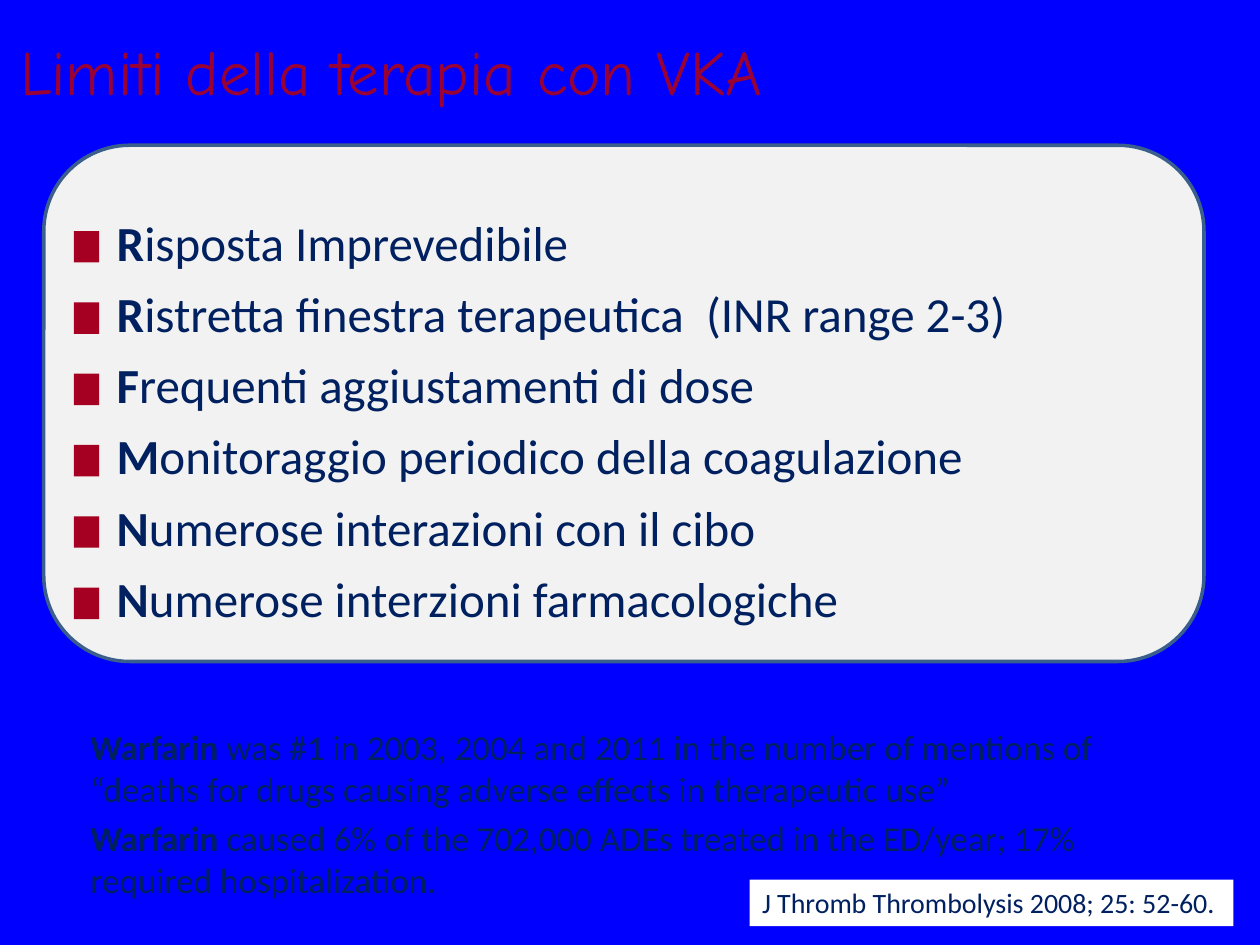
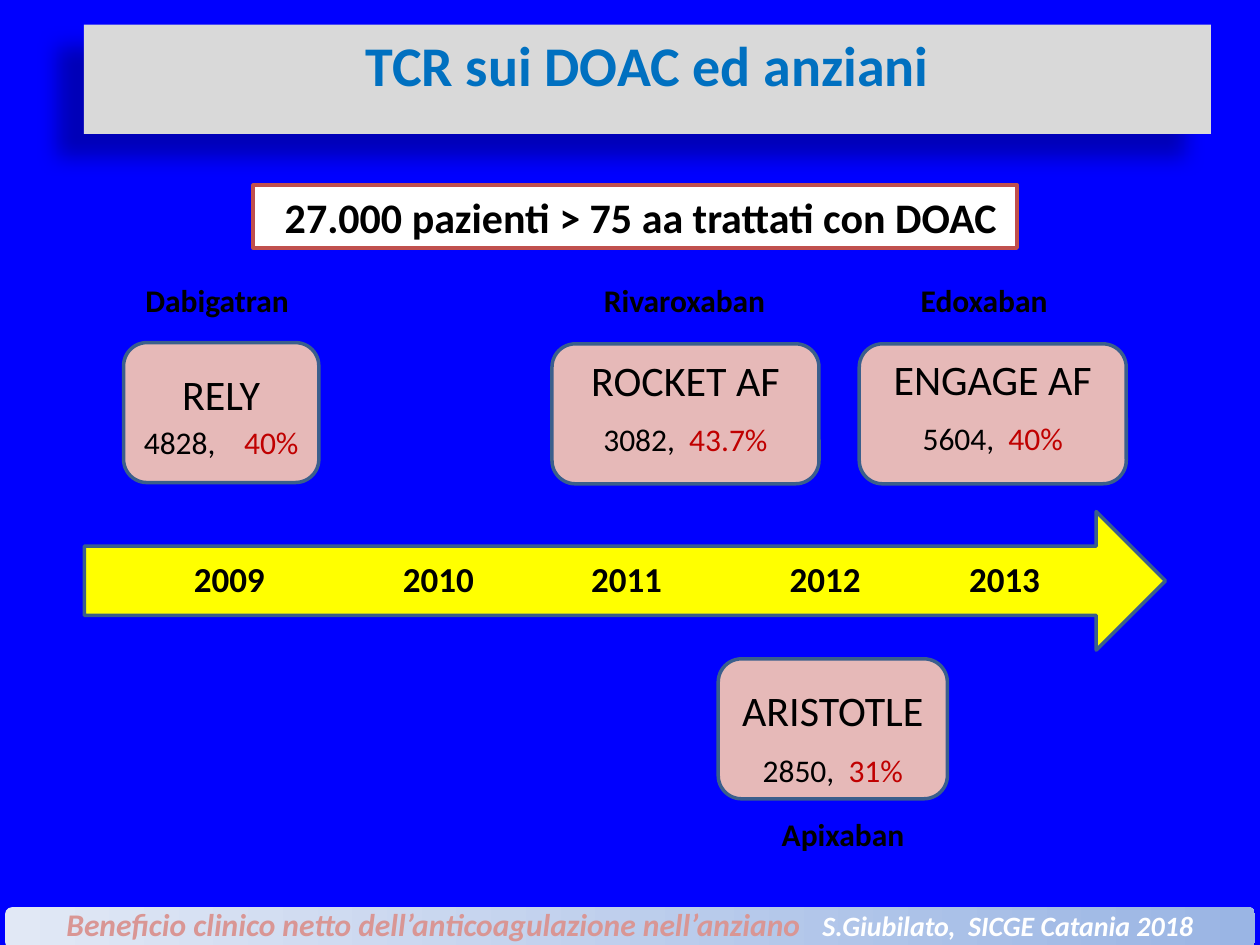
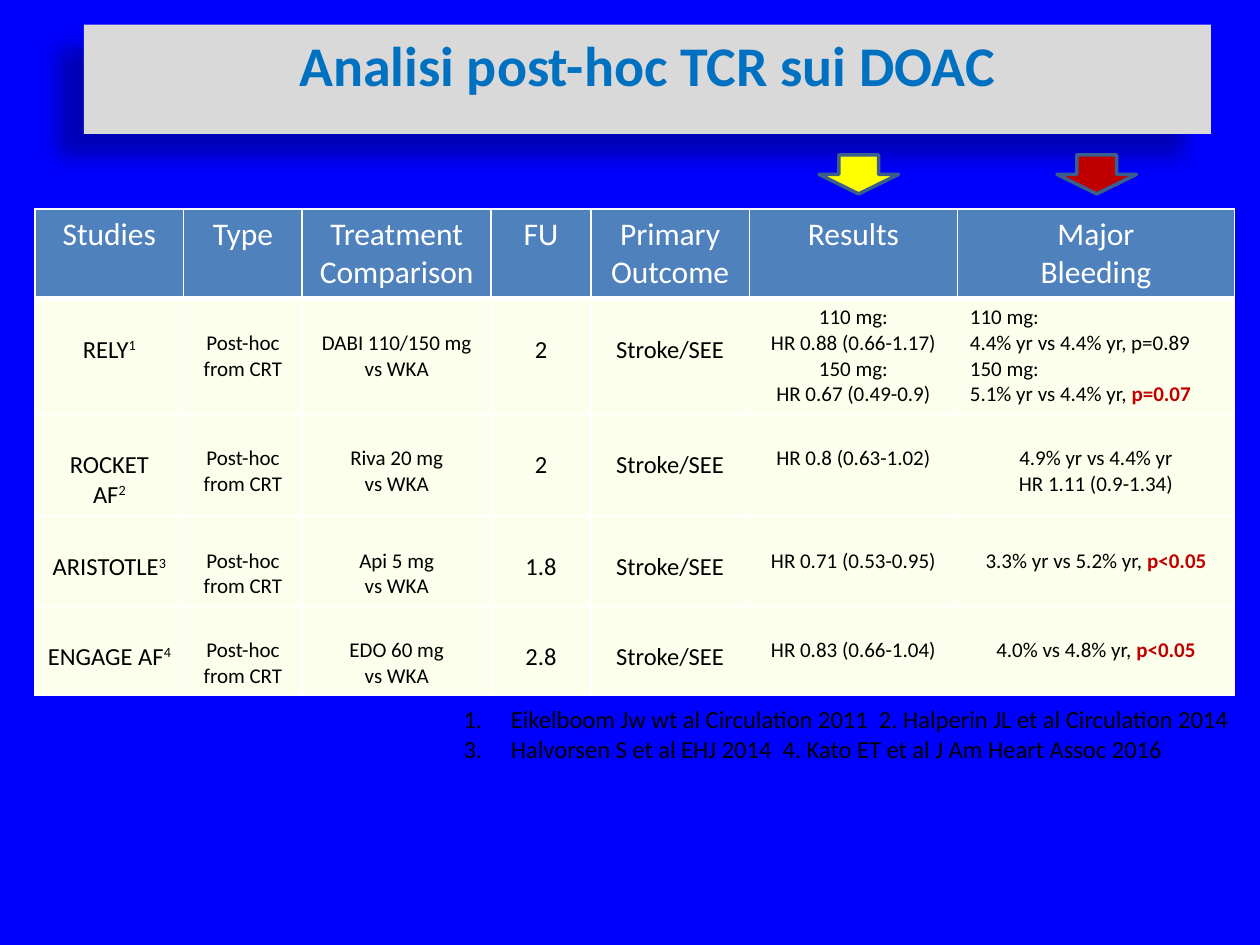
import pptx
import pptx.dml.color
import pptx.enum.shapes
import pptx.enum.text
import pptx.oxml
import pptx.oxml.ns
import pptx.util

Pt = pptx.util.Pt
SHAPE = pptx.enum.shapes.MSO_SHAPE
ALIGN = pptx.enum.text.PP_ALIGN
ANCHOR = pptx.enum.text.MSO_ANCHOR

COLORS = {
    "background": "0000FF", "panel": "F2F2F2", "outline": "3A5F8C",
    "marker": "A50021", "navy": "002060", "crimson": "990033",
    "white": "FFFFFF", "black": "000000", "yellow": "FFFF00",
    "red": "C00000", "card": "E6B9B8", "callout": "C0504D",
    "banner": "D9D9D9", "heading": "0070C0", "strip_light": "E1E8F5",
    "strip_dark": "9AB5E4", "footer": "D99694", "header": "4F81BD",
    "cell": "FCFFEB",
}
BANNER_BOX = (48, 14, 644, 62.5)
RED = {"color": "red"}
RED_BOLD = {"color": "red", "bold": True}
BOLD = {"bold": True}


# Shared helpers

def rgb(name):
    return pptx.dml.color.RGBColor.from_string(COLORS[name])


def write(paragraph, parts, size, color="black", bold=False, italic=False,
          face="Calibri", align=None):
    """Fill a paragraph with a string or with (text, overrides) parts."""
    if isinstance(parts, str):
        parts = [(parts, {})]
    paragraph.alignment = align
    for text, own in parts:
        run = paragraph.add_run()
        run.text = text
        font = run.font
        font.name = face
        font.size = Pt(own.get("size", size))
        font.bold = own.get("bold", bold)
        font.italic = italic
        font.color.rgb = rgb(own.get("color", color))
        for attribute in ("baseline", "spc"):
            if attribute in own:
                run._r.get_or_add_rPr().set(attribute, str(own[attribute]))


def set_frame(shape, anchor=ANCHOR.TOP, left=7.2, top=3.6, right=7.2):
    frame = shape.text_frame
    frame.word_wrap = True
    frame.auto_size = pptx.enum.text.MSO_AUTO_SIZE.NONE
    frame.vertical_anchor = anchor
    frame.margin_left, frame.margin_right = Pt(left), Pt(right)
    frame.margin_top, frame.margin_bottom = Pt(top), Pt(3.6)
    return frame


def add_text(slide, box, parts, size, anchor=ANCHOR.TOP, side=7.2, **style):
    frame = set_frame(slide.shapes.add_textbox(*map(Pt, box)), anchor,
                      left=side, right=side)
    write(frame.paragraphs[0], parts, size, **style)
    return frame


def add_block(slide, kind, box, fill, outline=None):
    block = slide.shapes.add_shape(kind, *map(Pt, box))
    block.shadow.inherit = False
    block.fill.solid()
    block.fill.fore_color.rgb = rgb(fill)
    if outline:
        block.line.color.rgb = rgb(outline)
        block.line.width = Pt(2)
    else:
        block.line.fill.background()
    return block


def set_title(slide, box, text, size, **style):
    title = slide.shapes.title
    title.left, title.top, title.width, title.height = map(Pt, box)
    write(set_frame(title).paragraphs[0], text, size, **style)
    return title


def add_banner(slide, text):
    banner = set_title(slide, BANNER_BOX, text, 32, color="heading",
                       bold=True, align=ALIGN.CENTER)
    banner.fill.solid()
    banner.fill.fore_color.rgb = rgb("banner")
    banner._element.spPr.append(pptx.oxml.parse_xml(
        f'<a:effectLst {pptx.oxml.ns.nsdecls("a")}>'
        f'<a:outerShdw blurRad="{Pt(11.8)}" dist="{Pt(19.7)}" dir="8460000"'
        ' algn="tr" rotWithShape="0">'
        f'<a:srgbClr val="{COLORS["black"]}"><a:alpha val="28000"/></a:srgbClr>'
        '</a:outerShdw></a:effectLst>'))


# Slide 1: limits of the therapy

def add_limits(slide, box):
    left, top, _, _ = box
    add_block(slide, SHAPE.ROUNDED_RECTANGLE, box, "panel", "outline")
    limits = [
        "Risposta Imprevedibile",
        "Ristretta finestra terapeutica  (INR range 2-3)",
        "Frequenti aggiustamenti di dose",
        "Monitoraggio periodico della coagulazione",
        "Numerose interazioni con il cibo",
        "Numerose interzioni farmacologiche",
    ]
    pitch = 40.75
    for index, limit in enumerate(limits):
        middle = top + 55 + index * pitch
        add_block(slide, SHAPE.RECTANGLE, (left + 17.3, middle - 6, 14.4, 18),
                  "marker")
        add_text(slide, (left + 34.6, middle - 18, 610, 36),
                 [(limit[0], BOLD), (limit[1:], {})], 28, ANCHOR.MIDDLE,
                 color="navy")


def add_evidence(slide, box):
    facts = [
        " was #1 in 2003, 2004 and 2011 in the number of mentions of “deaths "
        "for drugs causing adverse effects in therapeutic use”",
        " caused 6% of the 702,000 ADEs treated in the ED/year; 17% required "
        "hospitalization.",
    ]
    first, second = [[("Warfarin", BOLD), (fact, {})] for fact in facts]
    frame = add_text(slide, box, first, 20, color="navy")
    paragraph = frame.add_paragraph()
    paragraph.space_before = Pt(4)
    write(paragraph, second, 20, color="navy")


def add_citation(slide, box):
    citation = add_block(slide, SHAPE.RECTANGLE, box, "white")
    frame = set_frame(citation, ANCHOR.MIDDLE, right=0)
    write(frame.paragraphs[0], "J Thromb Thrombolysis 2008; 25: 52-60.", 16,
          color="navy", align=ALIGN.LEFT)


def build_limits_slide(slide):
    set_title(slide, (4.3, 15, 592.5, 51), "Limiti della terapia con VKA", 36,
              color="crimson", face="Comic Neue", align=ALIGN.LEFT)
    add_limits(slide, (25, 83, 663, 295))
    add_evidence(slide, (44.6, 411, 626.5, 105))
    add_citation(slide, (428.4, 502.6, 276.5, 26.6))


# Slide 2: trial timeline

def add_trial(slide, box, name, patients, share, inset, gap, spacing):
    card = add_block(slide, SHAPE.ROUNDED_RECTANGLE, box, "card", "outline")
    frame = set_frame(card, left=3.6, top=inset, right=3.6)
    write(frame.paragraphs[0], name, 24, align=ALIGN.CENTER)
    figures = frame.add_paragraph()
    figures.space_before = Pt(gap)
    write(figures, [(patients + ",", {}), (" ", {"spc": spacing}),
                    (share, RED)], 18, align=ALIGN.CENTER)


def add_timeline(slide, box):
    left, top, _, _ = box
    add_block(slide, SHAPE.RIGHT_ARROW, box, "yellow", "outline")
    year_offsets = {"2009": 55.5, "2010": 175, "2011": 282.5, "2012": 396,
                    "2013": 498.5}
    for year, offset in year_offsets.items():
        add_text(slide, (left + offset, top + 23, 75, 55), year, 20, bold=True)


def add_callout(slide, box):
    callout = add_block(slide, SHAPE.RECTANGLE, box, "white", "callout")
    frame = set_frame(callout, ANCHOR.MIDDLE, left=18, right=0)
    write(frame.paragraphs[0], "27.000 pazienti > 75 aa trattati con DOAC", 24,
          bold=True, align=ALIGN.LEFT)


def add_footer(slide, box):
    left, top, width, height = box
    strip = add_block(slide, SHAPE.ROUNDED_RECTANGLE,
                      (left + 2.9, top + 5, width - 5.8, 23.8), "strip_light")
    strip.fill.gradient()
    strip.fill.gradient_angle = 0
    for stop, name in zip(strip.fill.gradient_stops,
                          ("strip_light", "strip_dark")):
        stop.color.rgb = rgb(name)
    add_text(slide, (left, top, width, height), [
        ("Beneficio clinico netto dell’anticoagulazione nell’anziano\t", {}),
        ("S.Giubilato,  SICGE Catania 2018", {"size": 16, "color": "white"}),
    ], 18, color="footer", bold=True, italic=True, align=ALIGN.CENTER)


def build_timeline_slide(slide):
    add_banner(slide, "TCR sui DOAC ed anziani")
    add_callout(slide, (144.7, 105.8, 436.5, 36))
    add_timeline(slide, (48.2, 292.3, 617.8, 79.2))
    # Drug labels: left, top, width
    drugs = {"Dabigatran": (75.6, 157, 97), "Rivaroxaban": (337.7, 157, 107),
             "Edoxaban": (518.4, 157, 88), "Apixaban": (439.2, 462.2, 85)}
    for drug, (left, top, width) in drugs.items():
        add_text(slide, (left, top, width, 29), drug, 18, side=3.6, bold=True,
                 align=ALIGN.CENTER)
    # Trial cards: left, top, width, then text and its spacing
    trials = [
        (70.6, 195.8, 111.6, "RELY", "4828", "40%", 11, 2, 1220),
        (315.4, 196.5, 152.6, "ROCKET AF", "3082", "43.7%", 2, 9, 400),
        (410.4, 376.5, 131, "ARISTOTLE", "2850", "31%", 11, 9, 400),
        (491, 196.5, 152.6, "ENGAGE AF", "5604", "40%", 1.5, 9, 400),
    ]
    for left, top, width, *content in trials:
        add_trial(slide, (left, top, width, 80), *content)
    add_footer(slide, (0, 513.4, 720, 26.6))


# Slide 3: post-hoc table

def set_borders(cell, bottom):
    properties = cell._tc.get_or_add_tcPr()
    for side, width in (("L", 1), ("R", 1), ("T", 1), ("B", bottom)):
        properties.append(pptx.oxml.parse_xml(
            f'<a:ln{side} {pptx.oxml.ns.nsdecls("a")} w="{Pt(width)}">'
            f'<a:solidFill><a:srgbClr val="{COLORS["white"]}"/></a:solidFill>'
            f'</a:ln{side}>'))


def fill_cell(cell, lines, size, inset=0.0, fill="cell", color="black",
              align=ALIGN.CENTER, bottom=1):
    set_borders(cell, bottom)
    cell.fill.solid()
    cell.fill.fore_color.rgb = rgb(fill)
    cell.margin_top = Pt(3.6 + inset)
    frame = cell.text_frame
    for index, line in enumerate(lines):
        paragraph = frame.add_paragraph() if index else frame.paragraphs[0]
        write(paragraph, line, size, color=color, align=align)


def add_studies(slide, box):
    headers = ["Studies", "Type", "Treatment\nComparison", "FU",
               "Primary\nOutcome", "Results", "Major\nBleeding"]
    column_widths = [85, 67.7, 108, 56.9, 90.7, 118.8, 158.4]
    row_heights = [51.2, 65.8, 58.5, 51.2, 51.2]
    # Study, treatment, follow-up, results, major bleeding
    studies = [
        (["RELY"], "DABI 110/150 mg", "2",
         ["110 mg:", "HR 0.88 (0.66-1.17)", "150 mg:", "HR 0.67 (0.49-0.9)"],
         ["110 mg:", "4.4% yr vs 4.4% yr, p=0.89", "150 mg:",
          [("5.1% yr vs 4.4% yr, ", {}), ("p=0.07", RED_BOLD)]]),
        (["ROCKET", "AF"], "Riva 20 mg", "2", ["HR 0.8 (0.63-1.02)"],
         ["4.9% yr vs 4.4% yr", "HR 1.11 (0.9-1.34)"]),
        (["ARISTOTLE"], "Api 5 mg", "1.8", ["HR 0.71 (0.53-0.95)"],
         [[("3.3% yr vs 5.2% yr,", {}), (" p<0.05", RED_BOLD)]]),
        (["ENGAGE AF"], "EDO 60 mg", "2.8", ["HR 0.83 (0.66-1.04)"],
         [[("4.0% vs 4.8% yr, ", {}), ("p<0.05", RED_BOLD)]]),
    ]
    table = slide.shapes.add_table(len(row_heights), len(headers),
                                   *map(Pt, box)).table
    table.horz_banding = False
    for column, width in zip(table.columns, column_widths):
        column.width = Pt(width)
    for row, height in zip(table.rows, row_heights):
        row.height = Pt(height)
    for column, header in enumerate(headers):
        fill_cell(table.cell(0, column), header.split("\n"), 18,
                  fill="header", color="white", bottom=3)
    for row, (name, treatment, years, results, bleeding) in enumerate(studies, 1):
        reference = [(name[-1], {}), (str(row), {"baseline": 30000})]
        tall = len(results) > 1
        figures_inset = 0 if tall else 14.65
        entries = [
            (name[:-1] + [reference], 14, 17.1),
            (["Post-hoc", "from CRT"], 12, 14.65),
            ([treatment, "vs WKA"], 12, 14.65),
            ([years], 14, 17.1),
            (["Stroke/SEE"], 14, 17.1),
            (results, 12, figures_inset),
            (bleeding, 12, figures_inset),
        ]
        for column, (lines, size, inset) in enumerate(entries):
            left_aligned = tall and lines is bleeding
            fill_cell(table.cell(row, column), lines, size, inset,
                      align=ALIGN.LEFT if left_aligned else ALIGN.CENTER)


def add_references(slide, box):
    frame = add_text(
        slide, box, "Eikelboom Jw wt al Circulation 2011  2. Halperin JL et al "
        "Circulation 2014", 14)
    write(frame.add_paragraph(), "3.\tHalvorsen S et al EHJ 2014  4. Kato ET "
          "et al J Am Heart Assoc 2016", 14)
    for paragraph in frame.paragraphs:
        properties = paragraph._p.get_or_add_pPr()
        properties.set("marL", str(Pt(27)))
        properties.set("indent", str(Pt(-27)))
    frame.paragraphs[0]._p.get_or_add_pPr().append(pptx.oxml.parse_xml(
        f'<a:buAutoNum {pptx.oxml.ns.nsdecls("a")} type="arabicPeriod"/>'))


def build_studies_slide(slide):
    add_banner(slide, "Analisi post-hoc TCR sui DOAC")
    add_studies(slide, (20, 119.5, 685.5, 277.9))
    add_references(slide, (257.8, 399, 461, 41))
    for left, fill in ((468, "yellow"), (604, "red")):
        add_block(slide, SHAPE.DOWN_ARROW, (left, 88.5, 45.4, 22.3), fill,
                  "outline")


def main():
    deck = pptx.Presentation()
    deck.slide_width, deck.slide_height = Pt(720), Pt(540)
    background = deck.slide_master.background.fill
    background.solid()
    background.fore_color.rgb = rgb("background")
    title_only = deck.slide_layouts[5]
    for build in (build_limits_slide, build_timeline_slide,
                  build_studies_slide):
        build(deck.slides.add_slide(title_only))
    deck.save("out.pptx")


if __name__ == "__main__":
    main()
